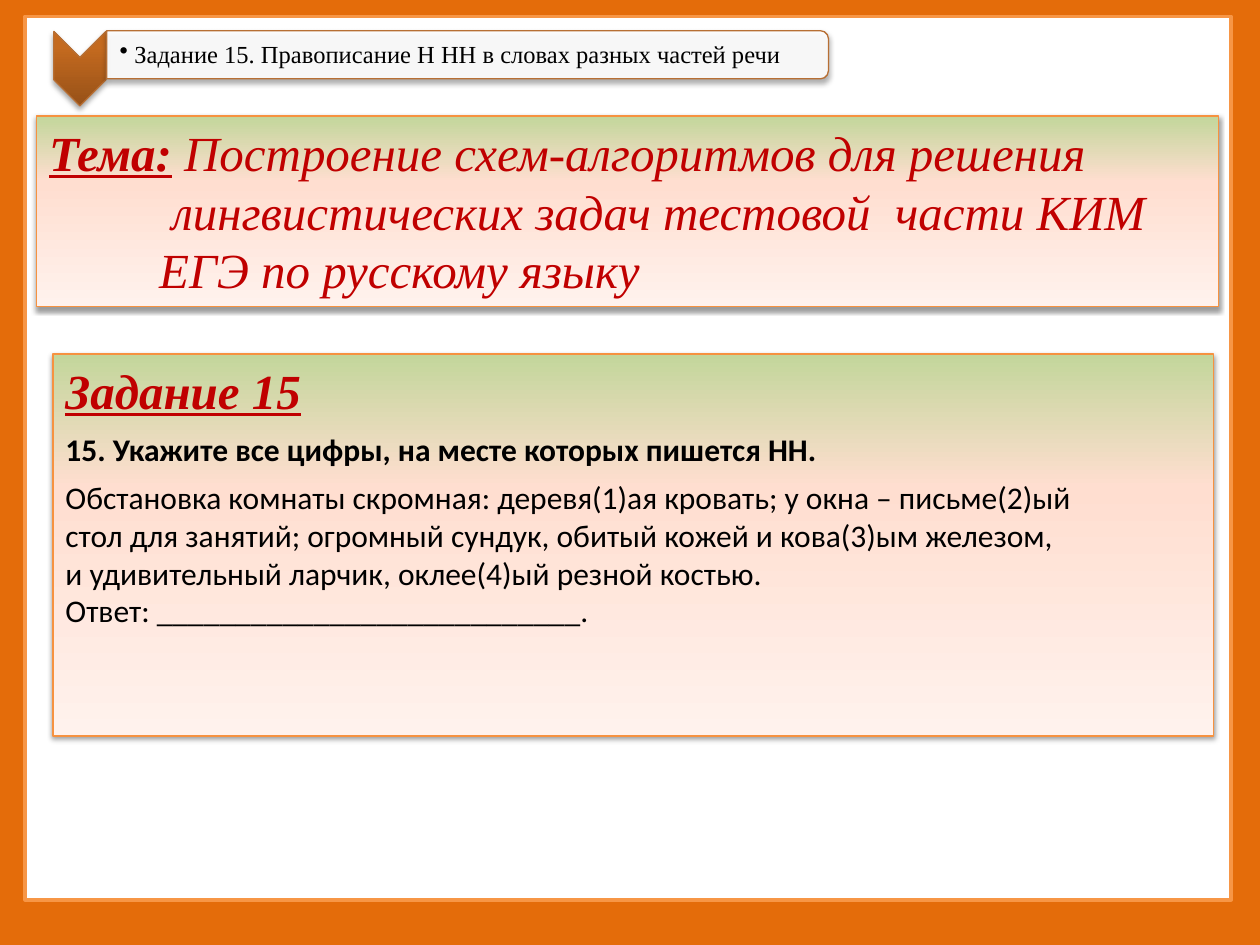
from pptx import Presentation
from pptx.dml.color import RGBColor
from pptx.enum.shapes import MSO_SHAPE as Kind
from pptx.enum.text import MSO_ANCHOR, PP_ALIGN
from pptx.oxml import parse_xml
from pptx.oxml.ns import nsdecls
from pptx.util import Cm, Pt

# Content: paragraphs hold runs of (text, style), space after and indent
TIMES, SANS = "Times New Roman", "Calibri"
RED, BLACK = "C00000", "000000"
HEAD = dict(font=TIMES, size=28, color=RED, bold=True, italic=True, under=True)
TOPIC = dict(font=TIMES, size=28, color=RED, italic=True)
ASK = dict(font=SANS, size=18, color=BLACK, bold=True)
BODY = dict(font=SANS, size=18, color=BLACK)
LABEL = dict(font=TIMES, size=14, color=BLACK)

BANNER = "Задание 15. Правописание Н НН в словах разных частей речи"
THEME = [
    ([("Тема:", HEAD), (" Построение схем-алгоритмов для решения", TOPIC)], 0, 0),
    ([("лингвистических задач тестовой  части КИМ", TOPIC)], 0, 2.47),
    ([("ЕГЭ по русскому языку", TOPIC)], 0, 2.22),
]
TASK = [
    ([("Задание 15", HEAD)], 6, 0),
    ([("15. Укажите все цифры, на месте которых пишется НН.", ASK)], 6, 0),
] + [([(line, BODY)], 0, 0) for line in (
    "Обстановка комнаты скромная: деревя(1)ая кровать; у окна – письме(2)ый",
    "стол для занятий; огромный сундук, обитый кожей и кова(3)ым железом,",
    "и удивительный ларчик, оклее(4)ый резной костью.",
    "Ответ: ___________________________.",
)]

# Panels: place in cm, paragraphs
PANELS = [((0.74, 2.34, 23.83, 3.84), THEME), ((1.07, 7.14, 23.39, 7.7), TASK)]
PEACH = [(0, "C3D69B"), (35, "FFDED0"), (100, "FFF2ED")]
BROWN = [(0, "975118"), (80, "C46A1F"), (100, "C86A1C")]


def rgb(code):
    return RGBColor.from_string(code)


def paint(fill, code):
    fill.solid()
    fill.fore_color.rgb = rgb(code)


def blend(shape, stops, angle):
    marks = "".join(f'<a:gs pos="{pos * 1000}"><a:srgbClr val="{code}"/></a:gs>'
                    for pos, code in stops)
    grad = parse_xml(f'<a:gradFill {nsdecls("a")} rotWithShape="0"><a:gsLst>{marks}'
                     f'</a:gsLst><a:lin ang="{angle * 60000}" scaled="0"/></a:gradFill>')
    shape._element.spPr.insert(2, grad)


def shade(shape, alpha, dist):
    shape.shadow.inherit = False
    glow = parse_xml(f'<a:outerShdw {nsdecls("a")} blurRad="{Pt(3.1)}" dist="{Pt(dist)}" '
                     f'dir="5400000" rotWithShape="0"><a:srgbClr val="000000">'
                     f'<a:alpha val="{alpha * 1000}"/></a:srgbClr></a:outerShdw>')
    shape._element.spPr.effectLst.append(glow)


def draw(kind, place, edge, width=0.75, turn=0):
    shape = slide.shapes.add_shape(kind, *map(Cm, place))
    shape.rotation = turn
    shape.line.color.rgb = rgb(edge)
    shape.line.width = Pt(width)
    shape.shadow.inherit = False
    return shape


def style(run, font, size, color, bold=False, italic=False, under=False):
    face = run.font
    face.name, face.size, face.color.rgb = font, Pt(size), rgb(color)
    face.bold, face.italic, face.underline = bold, italic, under


def write(frame, paras):
    frame.word_wrap = True
    frame.vertical_anchor = MSO_ANCHOR.TOP
    for i, (runs, after, indent) in enumerate(paras):
        para = frame.paragraphs[0] if i == 0 else frame.add_paragraph()
        para.alignment = PP_ALIGN.LEFT
        para.space_after = Pt(after)
        para._p.get_or_add_pPr().set("marL", str(Cm(indent)))
        for text, look in runs:
            run = para.add_run()
            run.text = text
            style(run, **look)


deck = Presentation()
deck.slide_width, deck.slide_height = Cm(25.4), Cm(19.05)
slide = deck.slides.add_slide(deck.slide_layouts[6])

# Orange border around a white sheet
paint(slide.background.fill, "E46C0A")
sheet = draw(Kind.RECTANGLE, (0.51, 0.33, 24.31, 17.81), "F79646", 2)
paint(sheet.fill, "FFFFFF")

# Banner: chevron and rounded strip, both turned to the right
arrow = draw(Kind.CHEVRON, (0.86, 0.86, 1.5, 1.05), "B76F34", turn=90)
blend(arrow, BROWN, 270)
shade(arrow, 35, 1.8)
strip = draw(Kind.ROUND_2_SAME_RECTANGLE, (8.94, -6.17, 0.97, 14.55), "B76F34", turn=90)
paint(strip.fill, "FFFFFF")
tint = strip._element.spPr.solidFill[0]
tint.append(parse_xml(f'<a:alpha {nsdecls("a")} val="90000"/>'))
shade(strip, 35, 1.8)

# Banner text with a bullet
label = slide.shapes.add_textbox(*map(Cm, (2.13, 0.69, 14.5, 0.86))).text_frame
write(label, [([(BANNER, LABEL)], 0, 0.3)])
label.vertical_anchor = MSO_ANCHOR.MIDDLE
label.margin_left = Cm(0.28)
label.margin_top = label.margin_right = label.margin_bottom = Cm(0.02)
label.paragraphs[0].line_spacing = 0.9
props = label.paragraphs[0]._p.pPr
props.set("indent", str(-Cm(0.3)))
props.append(parse_xml(f'<a:buChar {nsdecls("a")} char="•"/>'))

# Topic and task panels
for place, paras in PANELS:
    panel = draw(Kind.RECTANGLE, place, "F69240")
    blend(panel, PEACH, 90)
    shade(panel, 38, 1.6)
    write(panel.text_frame, paras)

deck.save("out.pptx")
